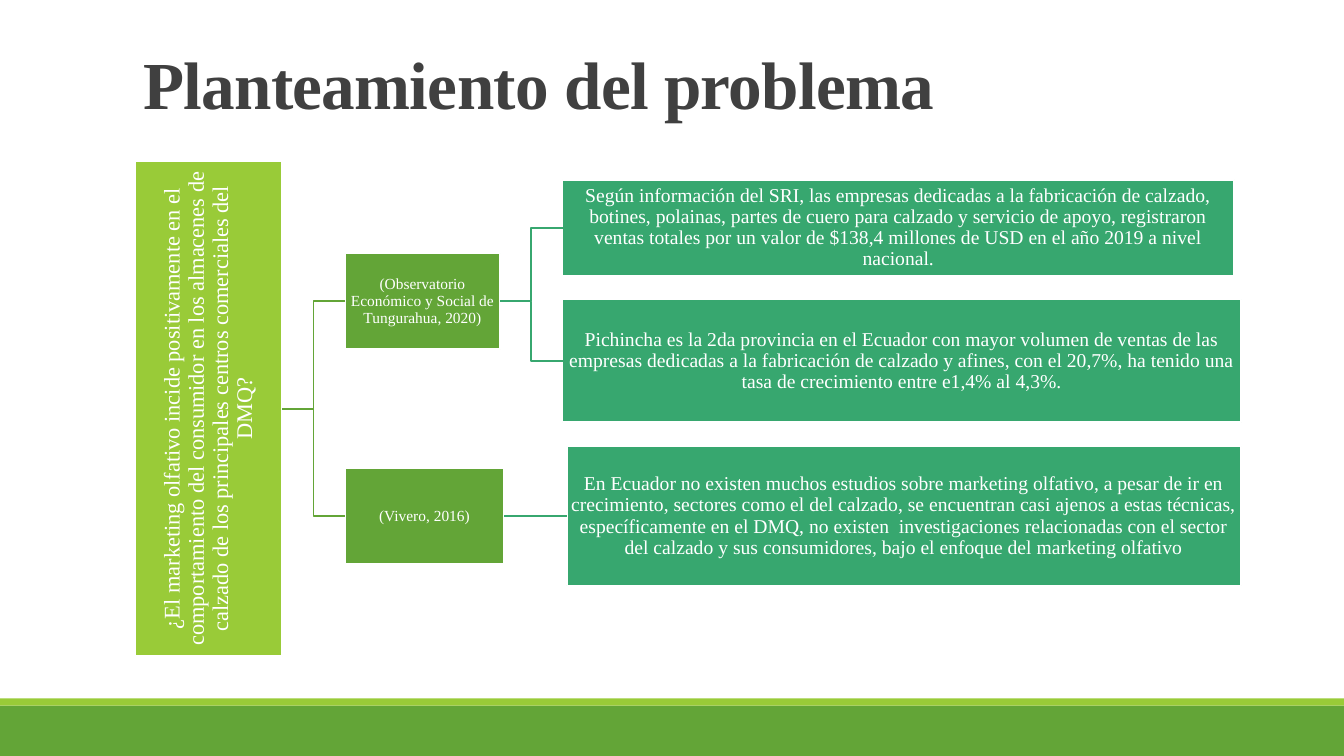
from pptx import Presentation
from pptx.dml.color import RGBColor
from pptx.enum.shapes import MSO_CONNECTOR, MSO_SHAPE
from pptx.enum.text import MSO_ANCHOR, MSO_AUTO_SIZE, PP_ALIGN
from pptx.oxml.ns import qn
from pptx.util import Inches, Pt
from lxml import etree

RECTANGLE = MSO_SHAPE.RECTANGLE
ELBOW, STRAIGHT = MSO_CONNECTOR.ELBOW, MSO_CONNECTOR.STRAIGHT
MIDDLE, BOTTOM = MSO_ANCHOR.MIDDLE, MSO_ANCHOR.BOTTOM
LEFT, CENTER = PP_ALIGN.LEFT, PP_ALIGN.CENTER
LEFT_SIDE, RIGHT_SIDE = 1, 3

FONT = "Times New Roman"
LIME, GREEN, TEAL = "99CB38", "63A537", "37A76F"
WHITE, DARK = "FFFFFF", "404040"
WIDTH, HEIGHT = 13.33, 7.5

QUESTION = ("¿El marketing olfativo incide positivamente en el comportamiento del "
            "consumidor en los almacenes de calzado de los principales centros "
            "comerciales del DMQ?")

# Each source: text, width, centre below the tree's top, and its findings.
# Each finding: text, left from the tree's left, centre, width, height.
SOURCES = [
    ("(Observatorio Económico y Social de Tungurahua, 2020)", 1.54, 1.39, [
        ("Según información del SRI, las empresas dedicadas a la fabricación de "
         "calzado, botines, polainas, partes de cuero para calzado y servicio de "
         "apoyo, registraron ventas totales por un valor de $138,4 millones de USD "
         "en el año 2019 a nivel nacional.", 4.26, 0.66, 6.66, 0.95),
        ("Pichincha es la 2da provincia en el Ecuador con mayor volumen de ventas "
         "de las empresas dedicadas a la fabricación de calzado y afines, con el "
         "20,7%, ha tenido una tasa de crecimiento entre e1,4% al 4,3%.",
         4.26, 1.98, 6.73, 1.22),
    ]),
    ("(Vivero, 2016)", 1.58, 3.52, [
        ("En Ecuador no existen muchos estudios sobre marketing olfativo, a pesar "
         "de ir en crecimiento, sectores como el del calzado, se encuentran casi "
         "ajenos a estas técnicas, específicamente en el DMQ, no existen  "
         "investigaciones relacionadas con el sector del calzado y sus "
         "consumidores, bajo el enfoque del marketing olfativo",
         4.3, 3.52, 6.69, 1.38),
    ]),
]


def color(value):
    return RGBColor.from_string(value)


def add_rectangle(page, left, top, width, height, fill):
    box = page.shapes.add_shape(RECTANGLE, Inches(left), Inches(top),
                                Inches(width), Inches(height))
    box.shadow.inherit = False
    box.fill.solid()
    box.fill.fore_color.rgb = color(fill)
    box.line.fill.background()
    return box


def add_node(page, left, middle, width, height, fill, text, size):
    """Add a white-edged text box centred vertically on middle."""
    box = add_rectangle(page, left, middle - height / 2, width, height, fill)
    box.line.color.rgb = color(WHITE)
    box.line.width = Pt(1.25)
    frame = box.text_frame
    frame.word_wrap = True
    frame.vertical_anchor = MIDDLE
    frame.margin_left = frame.margin_right = Inches(0.01)
    frame.margin_top = frame.margin_bottom = Inches(0.01)
    para = frame.paragraphs[0]
    para.text = text
    para.alignment = CENTER
    para.line_spacing = 0.9
    para.font.name = FONT
    para.font.size = Pt(size)
    para.font.color.rgb = color(WHITE)
    return box


def join(page, parent, child, line_color):
    """Link the parent's right side to the child's left side."""
    level = parent.top + parent.height // 2 == child.top + child.height // 2
    link = page.shapes.add_connector(STRAIGHT if level else ELBOW, 0, 0, 0, 0)
    link.begin_connect(parent, RIGHT_SIDE)
    link.end_connect(child, LEFT_SIDE)
    link.line.color.rgb = color(line_color)
    link.line.width = Pt(1.25)
    etree.SubElement(link._element.spPr, qn("a:effectLst"))


def add_title(page, left, top, width, height):
    title = page.shapes.title
    title.left, title.top = Inches(left), Inches(top)
    title.width, title.height = Inches(width), Inches(height)
    frame = title.text_frame
    frame.auto_size = MSO_AUTO_SIZE.NONE
    frame.vertical_anchor = BOTTOM
    para = frame.paragraphs[0]
    span = para.add_run()
    span.text = "Planteamiento del problema"
    para.alignment = LEFT
    para.line_spacing = 0.85
    para.font.name = FONT
    para.font.size = Pt(48)
    para.font.bold = True
    para.font.color.rgb = color(DARK)
    span.font._element.set("spc", "-50")


def add_tree(page, left, top, height):
    """Lay out the question, its sources and their findings, left to right."""
    question = add_node(page, left + 0.02, top + height / 2, 1.46, height,
                        LIME, QUESTION, 16)
    question.text_frame._txBody.bodyPr.set("vert", "vert270")
    for name, width, middle, findings in SOURCES:
        source = add_node(page, left + 2.1, top + middle, width, 0.95,
                          GREEN, name, 11)
        join(page, question, source, GREEN)
        for text, offset, center, finding_width, finding_height in findings:
            finding = add_node(page, left + offset, top + center, finding_width,
                               finding_height, TEAL, text, 14)
            join(page, source, finding, TEAL)


def add_footer(page, top, height):
    add_rectangle(page, 0, top + 0.07, WIDTH, height - 0.07, GREEN)
    add_rectangle(page, 0, top, WIDTH, 0.07, LIME)


def main():
    deck = Presentation()
    deck.slide_width, deck.slide_height = Inches(WIDTH), Inches(HEIGHT)
    page = deck.slides.add_slide(deck.slide_layouts[5])
    add_footer(page, 6.93, HEIGHT - 6.93)
    add_title(page, 1.32, 0.37, 11, 0.9)
    add_tree(page, 1.32, 1.6, 4.91)
    deck.save("out.pptx")


if __name__ == "__main__":
    main()
